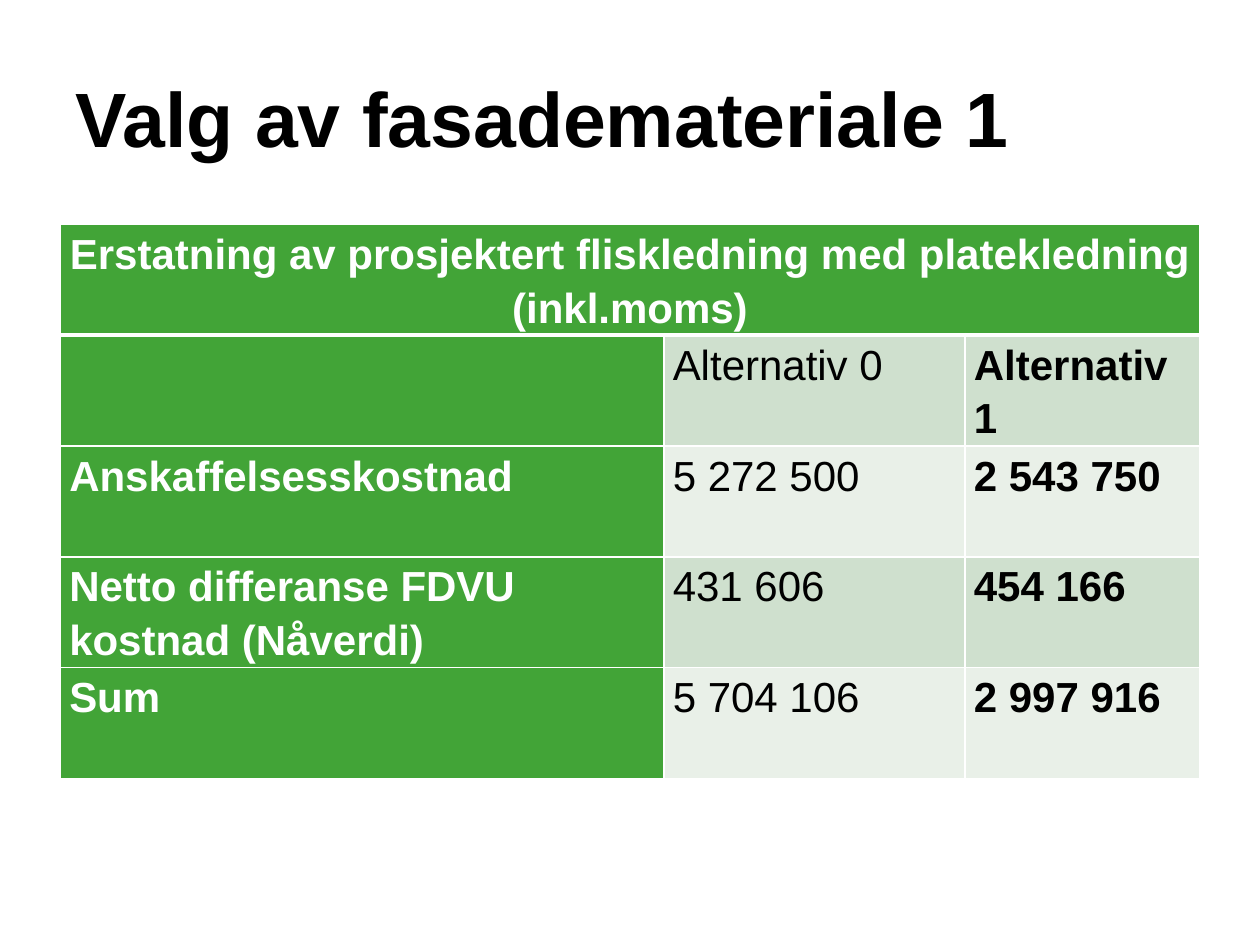
from lxml import etree
from pptx import Presentation
from pptx.dml.color import RGBColor
from pptx.enum.text import MSO_ANCHOR as Anchor, PP_ALIGN as Align
from pptx.oxml.ns import qn
from pptx.util import Inches, Pt

FONT = "Arial"
COLORS = {
    "text": "000000",
    "white": "FFFFFF",
    "green": "42A437",
    "band_dark": "CFE0CE",
    "band_light": "E9F0E8",
}
HEADING = "Erstatning av prosjektert fliskledning med platekledning (inkl.moms)"
ROWS = [
    ("", "Alternativ 0", "Alternativ 1"),
    ("Anskaffelsesskostnad", "5 272 500", "2 543 750"),
    ("Netto differanse FDVU kostnad (Nåverdi)", "431 606", "454 166"),
    ("Sum", "5 704 106", "2 997 916"),
]
COLUMN_WIDTHS = (4.79, 2.39, 1.86)
ROW_HEIGHT = 0.88


def color(name):
    return RGBColor.from_string(COLORS[name])


def set_font(paragraph, size, color_name, bold):
    font = paragraph.font
    font.name, font.size, font.bold = FONT, Pt(size), bold
    font.color.rgb = color(color_name)


def add_title(page, text):
    title = page.shapes.title
    title.left, title.top = Inches(0.5), Inches(0.3)
    title.width, title.height = Inches(9), Inches(1.25)
    frame = title.text_frame
    frame.text = text
    frame.vertical_anchor = Anchor.MIDDLE
    frame.paragraphs[0].alignment = Align.LEFT
    set_font(frame.paragraphs[0], 44, "text", True)


def set_borders(cell, top=1, bottom=1):
    """White lines on all four sides, widths in points."""
    properties = cell._tc.get_or_add_tcPr()
    widths = {"a:lnL": 1, "a:lnR": 1, "a:lnT": top, "a:lnB": bottom}
    for index, (tag, width) in enumerate(widths.items()):
        line = etree.Element(qn(tag), w=str(Pt(width)))
        fill = etree.SubElement(line, qn("a:solidFill"))
        etree.SubElement(fill, qn("a:srgbClr"), val=COLORS["white"])
        properties.insert(index, line)


def fill_cell(cell, text, fill_name, color_name, bold, align=Align.LEFT):
    cell.fill.solid()
    cell.fill.fore_color.rgb = color(fill_name)
    cell.margin_left = cell.margin_right = Inches(0.07)
    cell.margin_top = cell.margin_bottom = 0
    cell.text = text
    paragraph = cell.text_frame.paragraphs[0]
    paragraph.alignment = align
    paragraph.line_spacing = 1.15
    set_font(paragraph, 24, color_name, bold)


def add_cost_table(page):
    row_count = len(ROWS) + 1
    table = page.shapes.add_table(
        row_count, len(COLUMN_WIDTHS), Inches(0.48), Inches(1.78),
        Inches(sum(COLUMN_WIDTHS)), Inches(ROW_HEIGHT * row_count)).table
    for column, width in zip(table.columns, COLUMN_WIDTHS):
        column.width = Inches(width)

    # Heading across all columns
    heading = table.cell(0, 0)
    heading.merge(table.cell(0, len(COLUMN_WIDTHS) - 1))
    fill_cell(heading, HEADING, "green", "white", True, Align.CENTER)
    for cell in table.rows[0].cells:
        set_borders(cell, bottom=3)

    # Label column, then banded values with the last column in bold
    for row, texts in enumerate(ROWS, start=1):
        band = "band_dark" if row % 2 else "band_light"
        for column, text in enumerate(texts):
            cell = table.cell(row, column)
            if column == 0:
                fill_cell(cell, text, "green", "white", True)
            else:
                fill_cell(cell, text, band, "text", column == 2)
            set_borders(cell, top=3 if row == 1 else 1)


def main():
    deck = Presentation()
    deck.slide_width, deck.slide_height = Inches(10), Inches(7.5)
    page = deck.slides.add_slide(deck.slide_layouts[5])
    add_title(page, "Valg av fasademateriale 1")
    add_cost_table(page)
    deck.save("out.pptx")


if __name__ == "__main__":
    main()
